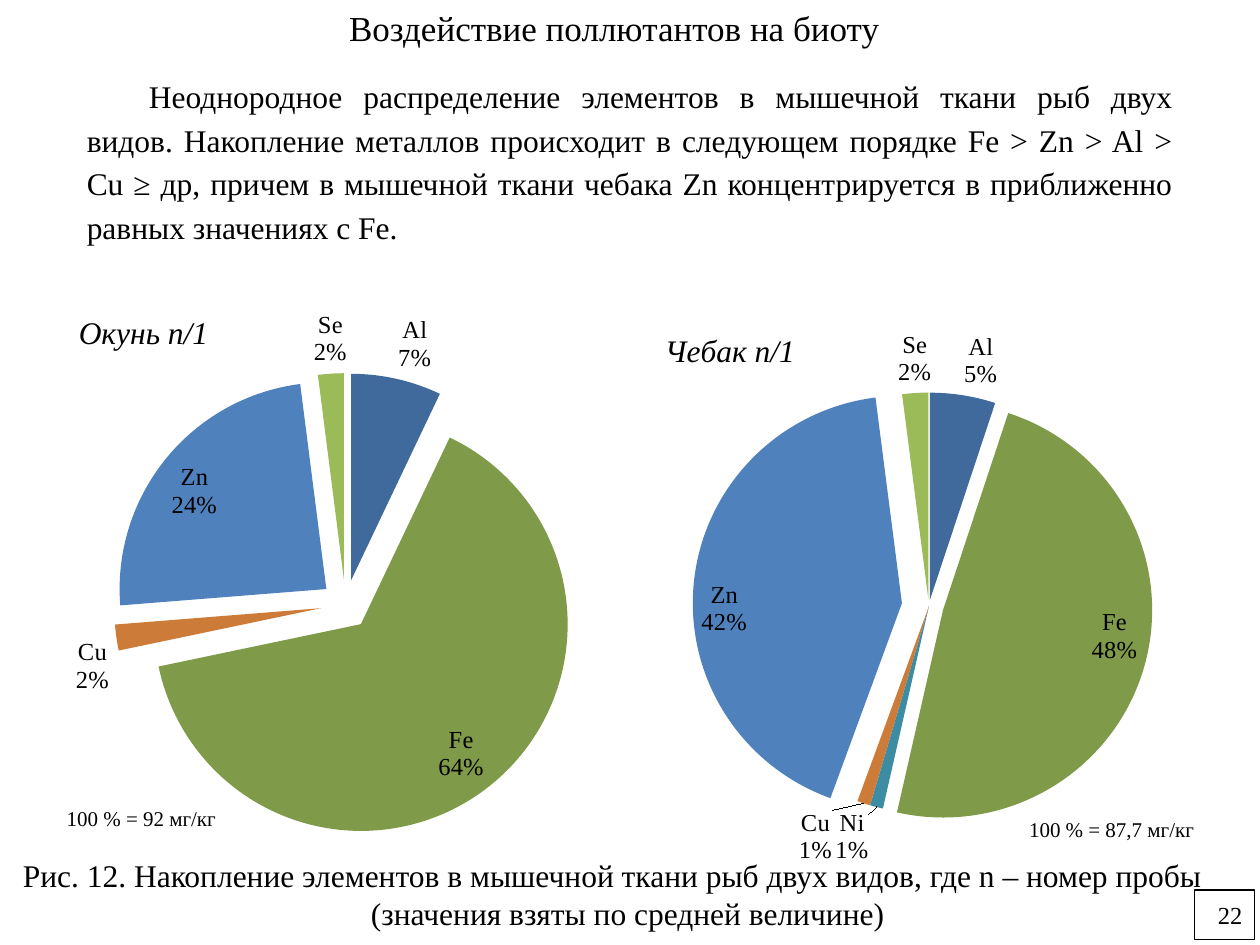
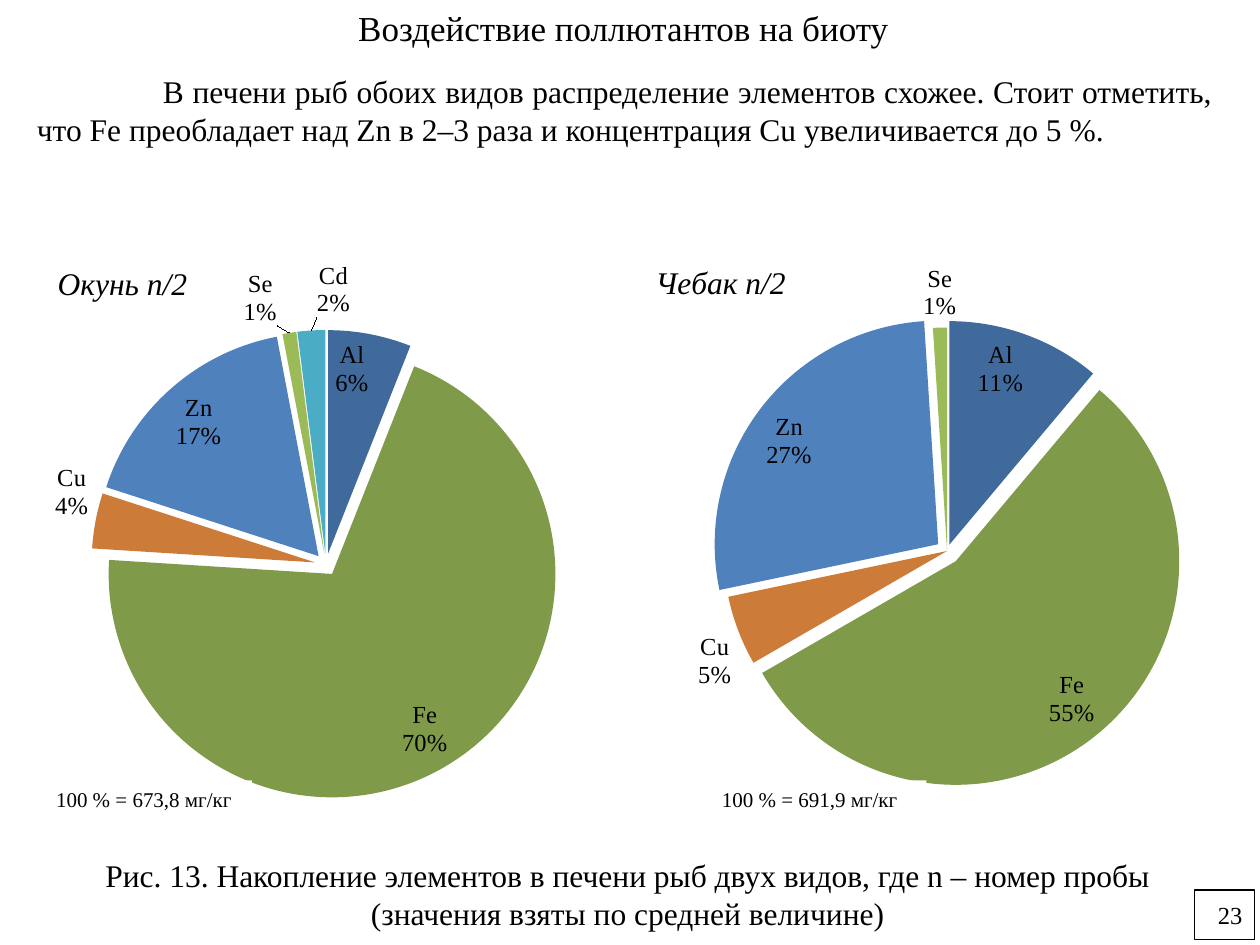
"""Build two slides on metal accumulation in fish, each with a pair of pie charts."""
import pptx
import pptx.chart.data
import pptx.dml.color
import pptx.enum.chart
import pptx.enum.shapes
import pptx.enum.text
import pptx.oxml
import pptx.oxml.ns
import pptx.util

Pt = pptx.util.Pt
RGB = pptx.dml.color.RGBColor
ALIGN = pptx.enum.text.PP_ALIGN
ANCHOR = pptx.enum.text.MSO_ANCHOR
LABEL = pptx.enum.chart.XL_LABEL_POSITION
qn = pptx.oxml.ns.qn

FONT = "Times New Roman"
BLACK = RGB(0x00, 0x00, 0x00)
WHITE = RGB(0xFF, 0xFF, 0xFF)
DARK = [RGB(0x40, 0x69, 0x9C), RGB(0x9E, 0x41, 0x3E), RGB(0x7F, 0x9A, 0x48),
        RGB(0x69, 0x51, 0x85), RGB(0x3C, 0x8D, 0xA3), RGB(0xCC, 0x7B, 0x38)]
BRIGHT = [RGB(0x4F, 0x81, 0xBD), RGB(0xC0, 0x50, 0x4D), RGB(0x9B, 0xBB, 0x59),
          RGB(0x80, 0x64, 0xA2), RGB(0x4B, 0xAC, 0xC6), RGB(0xF7, 0x96, 0x46)]
SLICE_COLORS = DARK + BRIGHT + BRIGHT[:2]
ELEMENTS = ["Al", "Cr", "Fe", "Co", "Ni", "Cu", "Zn",
            "As", "Se", "Mo", "Cd", "Sb", "Pb", "Bi"]

TITLE = "Воздействие поллютантов на биоту"
SLIDES = [
    {
        "number": "22", "title_left": 156.25,
        "body": "Неоднородное распределение элементов в мышечной ткани рыб двух видов. "
                "Накопление металлов происходит в следующем порядке Fe > Zn > Al > Cu ≥ др, "
                "причем в мышечной ткани чебака Zn концентрируется в приближенно равных "
                "значениях с Fe.",
        "body_box": (42.5, 37.5, 635, 107), "indent": 35.5, "spacing": 1.15,
        "caption": "Рис. 12. Накопление элементов в мышечной ткани рыб двух видов, "
                   "где n – номер пробы\n(значения взяты по средней величине)",
        "caption_align": ALIGN.LEFT,
        "charts": [
            {"name": "Окунь n/1", "box": (25, 162, 335, 340), "title_at": (0.05, 0.04),
             "plot": (0.12, 0.15, 0.79, 0.78), "explosion": 12, "exploded": {},
             "values": {"Al": 7, "Fe": 64, "Cu": 2, "Zn": 24, "Se": 2},
             "inside": ["Fe", "Zn"], "shifts": {}},
            {"name": "Чебак n/1", "box": (360, 173.5, 335, 323), "title_at": (0.05, 0.04),
             "plot": (0.15, 0.17, 0.72, 0.74), "explosion": 0,
             "exploded": {"Al": 3, "Fe": 7, "Zn": 13, "Se": 3},
             "values": {"Al": 5, "Fe": 48, "Ni": 1, "Cu": 1, "Zn": 42, "Se": 2},
             "inside": ["Fe", "Zn"], "shifts": {"Cu": (-0.05, 0), "Ni": (-0.01, 0)}},
        ],
        "notes": [("100 % = 92 мг/кг", (31, 457, 104, 22)),
                  ("100 % = 87,7 мг/кг", (581, 463, 119, 22))],
    },
    {
        "number": "23", "title_left": 161.5,
        "body": "В печени рыб обоих видов распределение элементов схожее. Стоит отметить, "
                "что Fe преобладает над Zn в 2–3 раза и концентрация Cu увеличивается до 5 %.",
        "body_box": (14, 37.5, 686, 51), "indent": 72, "spacing": 1,
        "caption": "Рис. 13. Накопление элементов в печени рыб двух видов, "
                   "где n – номер пробы\n(значения взяты по средней величине)",
        "caption_align": ALIGN.CENTER,
        "charts": [
            {"name": "Окунь n/2", "box": (20, 134, 323, 340), "title_at": (0.03, 0.04),
             "plot": (0.1, 0.16, 0.83, 0.79), "explosion": 5, "exploded": {},
             "values": {"Al": 6, "Fe": 70, "Cu": 4, "Zn": 17, "Se": 1, "Cd": 2},
             "inside": ["Al", "Fe", "Zn"], "shifts": {"Se": (-0.02, 0), "Cd": (0.04, -0.01)}},
            {"name": "Чебак n/2", "box": (354, 134, 350, 329), "title_at": (0.05, 0.04),
             "plot": (0.17, 0.16, 0.73, 0.78), "explosion": 0,
             "exploded": {"Al": 3, "Fe": 6, "Zn": 5},
             "values": {"Al": 11, "Fe": 55, "Cu": 5, "Zn": 27, "Se": 1},
             "inside": ["Al", "Fe", "Zn"], "shifts": {}},
        ],
        "notes": [("100 % = 673,8 мг/кг", (25, 446, 119, 19)),
                  ("100 % = 691,9 мг/кг", (405.5, 446, 124, 19))],
    },
]


def write(tf, text, size, align, italic=False):
    """Fill a text frame and format its runs."""
    tf.text = text
    for p in tf.paragraphs:
        p.alignment = align
        for r in p.runs:
            r.font.name, r.font.size, r.font.italic = FONT, Pt(size), italic
            r.font.bold = False
            r.font.color.rgb = BLACK


def place(parent, index, mode, **values):
    """Give a chart part a manual layout as fractions of the chart."""
    for old in parent.findall(qn("c:layout")):
        parent.remove(old)
    fields = "".join(f'<c:{key} val="{value}"/>' for key, value in values.items())
    parent.insert(index, pptx.oxml.parse_xml(
        f'<c:layout {pptx.oxml.ns.nsdecls("c")}><c:manualLayout>{mode}{fields}'
        '</c:manualLayout></c:layout>'))


EDGE = '<c:xMode val="edge"/><c:yMode val="edge"/>'
INNER = '<c:layoutTarget val="inner"/>' + EDGE
EXPLOSION = f'<c:explosion {pptx.oxml.ns.nsdecls("c")} val="%d"/>'

prs = pptx.Presentation()
prs.slide_width, prs.slide_height = Pt(720), Pt(540)

for page in SLIDES:
    s = prs.slides.add_slide(prs.slide_layouts[5])
    title = s.shapes.title
    title.left, title.top = Pt(page["title_left"]), Pt(0)
    title.width, title.height = Pt(357), Pt(31.5)
    tf = title.text_frame
    write(tf, TITLE, 20, ALIGN.LEFT)
    tf.auto_size = pptx.enum.text.MSO_AUTO_SIZE.NONE
    tf.vertical_anchor = ANCHOR.MIDDLE
    tf.margin_left, tf.margin_right = Pt(43.2), Pt(0)

    tf = s.shapes.add_textbox(*map(Pt, page["body_box"])).text_frame
    tf.word_wrap = True
    write(tf, page["body"], 18, ALIGN.JUSTIFY)
    p = tf.paragraphs[0]
    p.line_spacing = page["spacing"]
    p._p.get_or_add_pPr().set("indent", str(Pt(page["indent"])))

    for pie in page["charts"]:
        values = pie["values"]
        data = pptx.chart.data.CategoryChartData()
        data.categories = ELEMENTS
        data.add_series("Series 1", [values.get(element, 0) for element in ELEMENTS])
        chart = s.shapes.add_chart(pptx.enum.chart.XL_CHART_TYPE.PIE,
                                   *map(Pt, pie["box"]), data).chart
        chart.has_legend = False
        chart.font.name, chart.font.size = FONT, Pt(11)
        chart.font.color.rgb = BLACK
        chart.has_title = True
        write(chart.chart_title.text_frame, pie["name"], 18, ALIGN.LEFT, italic=True)
        x, y = pie["title_at"]
        place(chart.chart_title._element, 1, EDGE, x=x, y=y)
        x, y, w, h = pie["plot"]
        place(chart._chartSpace.chart.plotArea, 0, INNER, x=x, y=y, w=w, h=h)

        plot = chart.plots[0]
        plot.vary_by_categories = True
        series = plot.series[0]
        series.data_labels.show_value = False
        if pie["explosion"]:
            series._element.find(qn("c:tx")).addnext(
                pptx.oxml.parse_xml(EXPLOSION % pie["explosion"]))
        for i, element in enumerate(ELEMENTS):
            point = series.points[i]
            point.format.fill.solid()
            point.format.fill.fore_color.rgb = SLICE_COLORS[i]
            if element in pie["exploded"]:
                dpt = series._element.findall(qn("c:dPt"))[i]
                dpt.find(qn("c:spPr")).addprevious(
                    pptx.oxml.parse_xml(EXPLOSION % pie["exploded"][element]))
            if element in values:
                label = point.data_label
                write(label.text_frame, f"{element}\n{values[element]}%", 14, ALIGN.CENTER)
                label.position = (LABEL.INSIDE_END if element in pie["inside"]
                                  else LABEL.OUTSIDE_END)
            if element in pie["shifts"]:
                x, y = pie["shifts"][element]
                dlbl = series._element.findall(qn("c:dLbls") + "/" + qn("c:dLbl"))[-1]
                place(dlbl, 1, "", x=x, y=y)

    tf = s.shapes.add_textbox(Pt(6), Pt(485.5), Pt(705.5), Pt(51)).text_frame
    tf.word_wrap = True
    tf.vertical_anchor = ANCHOR.MIDDLE
    write(tf, page["caption"], 18, ALIGN.CENTER)
    tf.paragraphs[0].alignment = page["caption_align"]

    boxes = [(text, box, 12, ALIGN.LEFT, ANCHOR.TOP) for text, box in page["notes"]]
    boxes.append((page["number"], (682.5, 508.5, 34.5, 28.5), 14, ALIGN.RIGHT, ANCHOR.MIDDLE))
    for text, box, size, align, anchor in boxes:
        sp = s.shapes.add_shape(pptx.enum.shapes.MSO_SHAPE.RECTANGLE, *map(Pt, box))
        sp.shadow.inherit = False
        sp.fill.solid()
        sp.fill.fore_color.rgb = WHITE
        sp.line.fill.background()
        sp.text_frame.vertical_anchor = anchor
        write(sp.text_frame, text, size, align)
    sp.line.color.rgb = BLACK
    sp.line.width = Pt(0.75)

prs.save("out.pptx")
